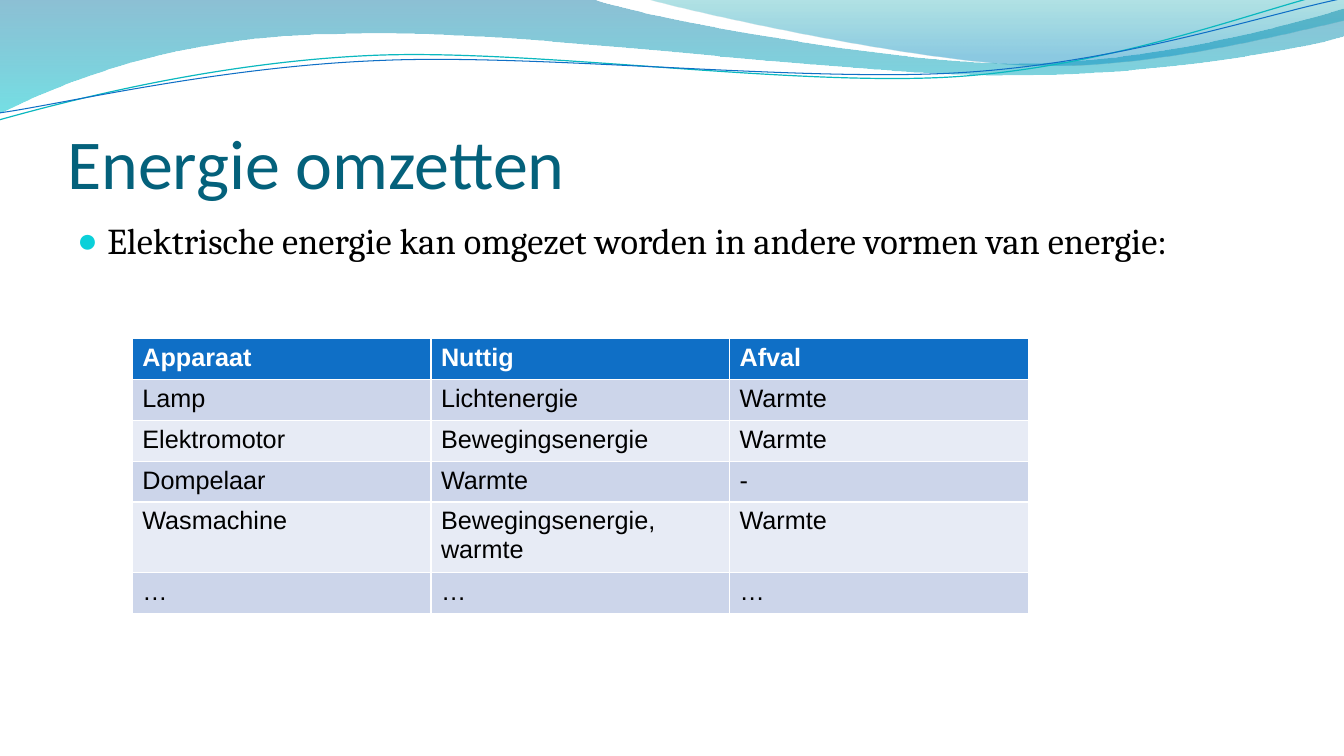
from math import cos, radians, sin

from lxml import etree
from pptx import Presentation
from pptx.dml.color import RGBColor
from pptx.enum.text import MSO_ANCHOR, MSO_AUTO_SIZE, PP_ALIGN
from pptx.oxml.ns import qn
from pptx.util import Pt

BLUE, WHITE, BLACK = "0F6FC6", "FFFFFF", "000000"
BANDS = ("E7EBF5", "CCD5EA")
STRAND_TILT = 2.7

UPPER_WAVE = [
    (0, -0.7), (422.6, -0.7),
    (456.5, 12.2, 637.2, 45.4, 727.9, 45.4),
    (819.4, 45.4, 920.2, 18.7, 959.8, 6.5),
    (961.2, 25.9),
    (943.9, 31.7, 835.2, 54.7, 715.7, 54),
    (596.9, 54, 366.5, 20.2, 247, 24.5),
    (123.1, 25.2, 43.9, 59.8, -0.7, 81.4),
]
RIGHT_WAVE = [
    (460.1, -0.7),
    (488.9, 7.9, 654.5, 44.6, 738, 46.8),
    (821.5, 49.7, 923, 23, 959.8, 15.1),
    (959.8, 0),
]
TEAL_STRAND = [
    (-0.7, 85.7),
    (46.1, 72.7, 151.9, 44.6, 265.7, 39.6),
    (379.4, 34.6, 568.8, 62.6, 684, 54.7),
    (799.2, 46.8, 901.4, 5.8, 958.3, -7.2),
]
BLUE_STRAND = [
    (0, 80.6),
    (45.4, 74.2, 157, 47.5, 272.2, 43.2),
    (385.9, 38.2, 573.1, 59, 687.6, 51.8),
    (802.8, 44.6, 903.6, 10.1, 960.5, -1.4),
]
CONVERSIONS = [
    ("Apparaat", "Nuttig", "Afval"),
    ("Lamp", "Lichtenergie", "Warmte"),
    ("Elektromotor", "Bewegingsenergie", "Warmte"),
    ("Dompelaar", "Warmte", "-"),
    ("Wasmachine", "Bewegingsenergie, warmte", "Warmte"),
    ("…", "…", "…"),
]


def color(value):
    return RGBColor.from_string(value)


def add_element(parent, tag, **attributes):
    element = etree.SubElement(parent, qn(tag))
    for name, value in attributes.items():
        element.set(name, str(value))
    return element


def turn(point, center, degrees):
    x, y = point[0] - center[0], point[1] - center[1]
    cosine, sine = cos(radians(degrees)), sin(radians(degrees))
    return center[0] + x * cosine - y * sine, center[1] + x * sine + y * cosine


class SlideBuilder:
    """Holds the presentation style and the slide being filled."""

    def __init__(self):
        self.presentation = Presentation()
        self.presentation.slide_width = Pt(960)
        self.presentation.slide_height = Pt(540)
        self.slide = self.presentation.slides.add_slide(self.presentation.slide_layouts[5])
        self.shapes = self.slide.shapes

    def style(self, paragraph, font_name, size, font_color, bold=False):
        for run in paragraph.runs:
            run.font.name = font_name
            run.font.size = Pt(size)
            run.font.bold = bold
            run.font.color.rgb = color(font_color)

    def outline(self, steps, close, center=(0, 0), tilt=0):
        points = [turn(step[index:index + 2], center, tilt)
                  for step in steps for index in range(0, len(step), 2)]
        points = [(Pt(x), Pt(y)) for x, y in points]
        builder = self.shapes.build_freeform(*points[0])
        builder.add_line_segments(points[1:], close=close)
        shape = builder.convert_to_shape()
        shape.shadow.inherit = False
        shape.rotation = -tilt
        segments = iter(list(shape._element.iter(qn("a:lnTo"))))
        for step in steps[1:]:
            segment = next(segments)
            if len(step) == 6:
                curve = etree.Element(qn("a:cubicBezTo"))
                segment.addprevious(curve)
                for corner in (segment, next(segments), next(segments)):
                    curve.append(corner[0])
                    corner.getparent().remove(corner)
        return shape

    def wave(self, steps, stops):
        shape = self.outline(steps, True)
        shape.line.fill.background()
        shape.fill.gradient()
        shape.fill.gradient_angle = 270
        for stop, (position, value, _) in zip(shape.fill.gradient_stops, stops):
            stop.position = position
            stop.color.rgb = color(value)
        for element, (_, _, opacity) in zip(shape._element.iter(qn("a:gs")), stops):
            add_element(element[0], "a:alpha", val=opacity * 1000)

    def strand(self, steps, center, line_color, width):
        shape = self.outline(steps, False, center, STRAND_TILT)
        shape.fill.background()
        shape.line.color.rgb = color(line_color)
        shape.line.width = Pt(width)

    def title(self, text, left, top, width, height):
        title = self.shapes.title
        title.left, title.top, title.width, title.height = map(Pt, (left, top, width, height))
        frame = title.text_frame
        frame.text = text
        frame.auto_size = MSO_AUTO_SIZE.NONE
        frame.vertical_anchor = MSO_ANCHOR.BOTTOM
        frame.margin_left = frame.margin_right = frame.margin_bottom = 0
        frame.margin_top = Pt(3.6)
        frame.paragraphs[0].alignment = PP_ALIGN.LEFT
        self.style(frame.paragraphs[0], "Calibri", 50, "04617B")

    def bullet(self, text, left, top, width, height):
        frame = self.shapes.add_textbox(*map(Pt, (left, top, width, height))).text_frame
        frame.word_wrap = True
        frame.text = text
        paragraph = frame.paragraphs[0]
        properties = paragraph._p.get_or_add_pPr()
        properties.set("marL", str(Pt(21.6)))
        properties.set("indent", str(-Pt(21.6)))
        bullet_color = add_element(properties, "a:buClr")
        add_element(bullet_color, "a:srgbClr", val="0BD0D9")
        add_element(properties, "a:buSzPct", val=95000)
        add_element(properties, "a:buFont", typeface="Arial")
        add_element(properties, "a:buChar", char="●")
        self.style(paragraph, "Cambria", 26, BLACK)

    def table(self, rows, left, top, width, row_height):
        size = len(rows), len(rows[0])
        place = map(Pt, (left, top, width, row_height * len(rows)))
        table = self.shapes.add_table(*size, *place).table
        for row_index, row in enumerate(rows):
            header = row_index == 0
            table.rows[row_index].height = Pt(row_height)
            for column_index, text in enumerate(row):
                cell = table.cell(row_index, column_index)
                cell.text = text
                cell.fill.solid()
                cell.fill.fore_color.rgb = color(BLUE if header else BANDS[row_index % 2])
                self.style(cell.text_frame.paragraphs[0], "Arial", 18,
                           WHITE if header else BLACK, header)


def main():
    builder = SlideBuilder()
    builder.wave(UPPER_WAVE, [(0, "0074A1", 45), (1, "00C6CF", 55)])
    builder.wave(RIGHT_WAVE, [(0, "00A1A9", 30), (0.8, "008BBF", 45)])
    builder.strand(TEAL_STRAND, (478.8, 41.4), "0AB8BF", 0.85)
    builder.strand(BLUE_STRAND, (480.2, 42.5), BLUE, 0.75)
    builder.title("Energie omzetten", 48, 55.4, 864, 90)
    builder.bullet("Elektrische energie kan omgezet worden in andere vormen van energie:",
                   48, 152.6, 864, 345.6)
    builder.table(CONVERSIONS, 94.5, 241.8, 640, 29.2)
    builder.presentation.save("out.pptx")


if __name__ == "__main__":
    main()
